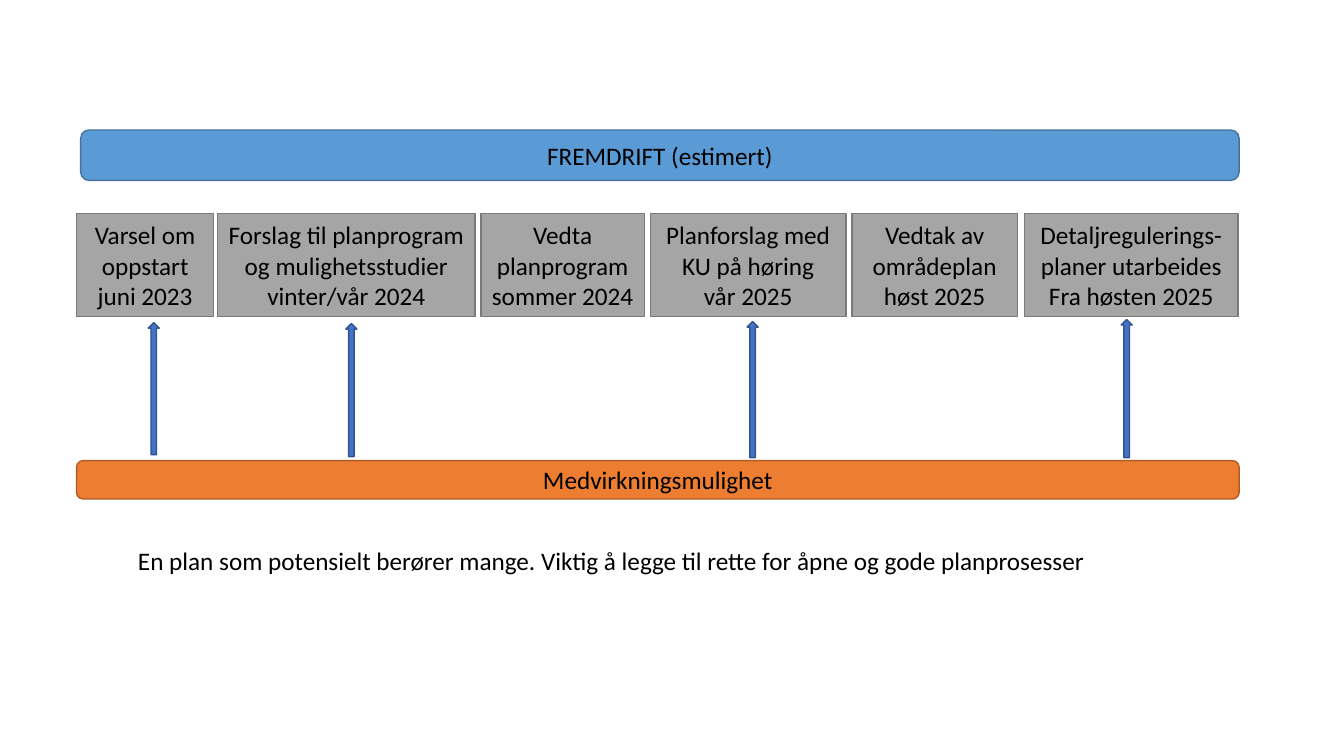
import pptx
import pptx.util
import pptx.dml.color
import pptx.enum.shapes
import pptx.enum.text

Inches = pptx.util.Inches
Pt = pptx.util.Pt
Kind = pptx.enum.shapes.MSO_SHAPE
Align = pptx.enum.text.PP_ALIGN


def paint(shape, fill, line):
    """Give a shape a flat fill and a thin outline, with no shadow."""
    shape.shadow.inherit = False
    shape.fill.solid()
    shape.fill.fore_color.rgb = pptx.dml.color.RGBColor.from_string(fill)
    shape.line.color.rgb = pptx.dml.color.RGBColor.from_string(line)
    shape.line.width = Pt(1)


def write(shape, text, align=Align.CENTER, after=0):
    """Fill a shape with text, one paragraph for each line."""
    frame = shape.text_frame
    frame.word_wrap = True
    frame.text = text
    for para in frame.paragraphs:
        para.alignment = align
        para.space_after = Pt(after)
        para.font.name = "Calibri"
        para.font.size = Pt(18)
        para.font.color.rgb = pptx.dml.color.RGBColor.from_string("000000")


deck = pptx.Presentation()
deck.slide_width = Inches(13.33)
deck.slide_height = Inches(7.5)
slide = deck.slides.add_slide(deck.slide_layouts[6])
shapes = slide.shapes

# Bars above and below the steps
bars = [
    ("FREMDRIFT (estimert)", 0.8, 1.29, 11.49, 0.5, "5B9BD5", "43739E"),
    ("Medvirkningsmulighet", 0.76, 4.57, 11.53, 0.38, "ED7D31", "AF5C24"),
]
for text, left, top, width, height, fill, line in bars:
    bar = shapes.add_shape(Kind.ROUNDED_RECTANGLE, Inches(left), Inches(top),
                           Inches(width), Inches(height))
    paint(bar, fill, line)
    write(bar, text)

# Steps of the plan: text, left, width
steps = [
    ("Varsel om oppstart\njuni 2023", 0.76, 1.36),
    ("Forslag til planprogram og mulighetsstudier\nvinter/vår 2024", 2.16, 2.55),
    ("Vedta planprogram\nsommer 2024", 4.77, 1.62),
    ("Planforslag med KU på høring\nvår 2025", 6.45, 1.94),
    ("Vedtak av områdeplan\nhøst 2025", 8.45, 1.64),
    ("Detaljregulerings-planer utarbeides\nFra høsten 2025", 10.16, 2.12),
]
for text, left, width in steps:
    step = shapes.add_shape(Kind.RECTANGLE, Inches(left), Inches(2.12),
                            Inches(width), Inches(1.02))
    paint(step, "A5A5A5", "7A7A7A")
    write(step, text)

# Arrows from the lower bar to the steps open for input: left, top, height
arrows = [(1.47, 3.2, 1.31), (3.43, 3.21, 1.32), (7.41, 3.19, 1.35), (11.12, 3.17, 1.37)]
for left, top, height in arrows:
    arrow = shapes.add_shape(Kind.UP_ARROW, Inches(left), Inches(top),
                             Inches(0.11), Inches(height))
    paint(arrow, "4472C4", "325491")

note = shapes.add_textbox(Inches(1.27), Inches(5.36), Inches(10.09), Inches(0.4))
write(note, "En plan som potensielt berører mange. "
      "Viktig å legge til rette for åpne og gode planprosesser",
      align=Align.LEFT, after=10)
note.text_frame.auto_size = pptx.enum.text.MSO_AUTO_SIZE.SHAPE_TO_FIT_TEXT

deck.save("out.pptx")
